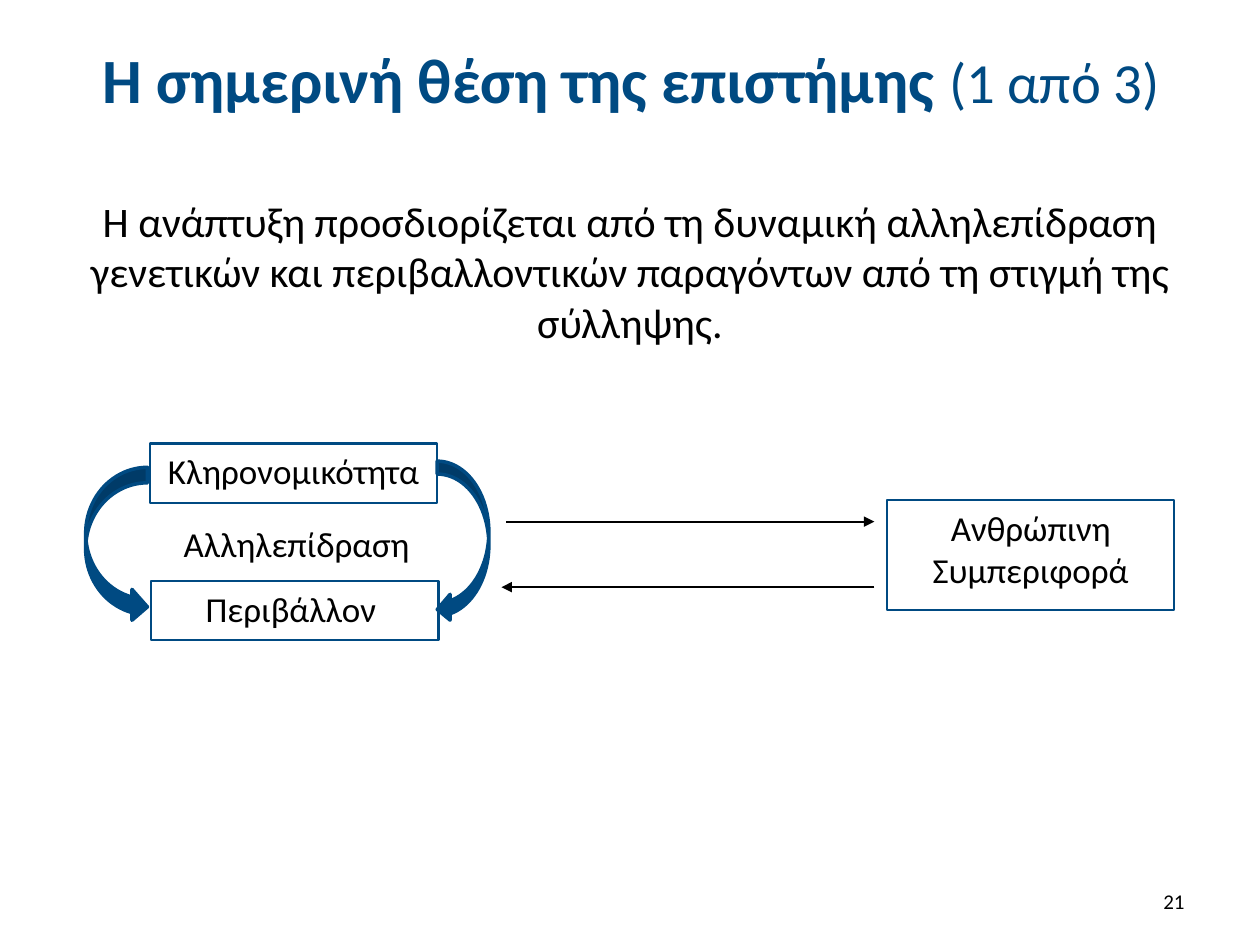
import pptx
import pptx.dml.color
import pptx.enum.shapes
import pptx.enum.text
import pptx.oxml.ns
import pptx.util
from lxml import etree

Inches = pptx.util.Inches
Pt = pptx.util.Pt
SHAPE = pptx.enum.shapes.MSO_SHAPE
ALIGN = pptx.enum.text.PP_ALIGN
ANCHOR = pptx.enum.text.MSO_ANCHOR
qn = pptx.oxml.ns.qn

COLORS = {"blue": "004A82", "black": "000000"}
FONT = "Calibri"
BOX_W = 2.28
BOX_H = 0.47


def rgb(name):
    return pptx.dml.color.RGBColor.from_string(COLORS[name])


def place(s, left, top, width, height):
    s.left, s.top = Inches(left), Inches(top)
    s.width, s.height = Inches(width), Inches(height)


def write(s, runs, align=ALIGN.CENTER, anchor=ANCHOR.TOP, color="black"):
    """Fill a shape with one paragraph of (text, size, bold) runs."""
    tf = s.text_frame
    tf.word_wrap = True
    tf.vertical_anchor = anchor
    p = tf.paragraphs[0]
    p.alignment = align
    p.space_before = Pt(0)
    for text, size, bold in runs:
        r = p.add_run()
        r.text = text
        r.font.name = FONT
        r.font.size = Pt(size)
        r.font.bold = bold
        r.font.color.rgb = rgb(color)
    return p


def add_label(shapes, text, size, left, top, width, height, **layout):
    s = shapes.add_textbox(*map(Inches, (left, top, width, height)))
    write(s, [(text, size, False)], **layout)
    return s


def add_outlined(shapes, kind, left, top, width, height, weight):
    s = shapes.add_shape(kind, *map(Inches, (left, top, width, height)))
    s.shadow.inherit = False
    s.line.color.rgb = rgb("blue")
    s.line.width = Pt(weight)
    return s


def add_box(shapes, text, left, top, height=BOX_H):
    s = add_outlined(shapes, SHAPE.RECTANGLE, left, top, BOX_W, height, 1.25)
    s.fill.background()
    write(s, [(text, 20, False)])


def add_curved_arrow(shapes, kind, left, top, width, height):
    s = add_outlined(shapes, kind, left, top, width, height, 2)
    s.fill.solid()
    s.fill.fore_color.rgb = rgb("blue")


def add_arrow(shapes, x1, x2, y):
    s = shapes.add_connector(pptx.enum.shapes.MSO_CONNECTOR.STRAIGHT,
                             Inches(x1), Inches(y), Inches(x2), Inches(y))
    s.line.color.rgb = rgb("black")
    s.line.width = Pt(1.25)
    etree.SubElement(s.line._get_or_add_ln(), qn("a:tailEnd"), type="triangle")
    etree.SubElement(s._element.spPr, qn("a:effectLst"))


def main():
    prs = pptx.Presentation()
    prs.slide_width, prs.slide_height = Inches(10), Inches(7.5)
    slide = prs.slides.add_slide(prs.slide_layouts[1])

    # Title
    title = slide.shapes.title
    place(title, 0.51, 0.13, 9, 0.99)
    write(title, [("Η σημερινή θέση της επιστήμης ", 36, True),
                  ("(1 από 3)", 32.4, False)],
          anchor=ANCHOR.MIDDLE, color="blue")

    # Body statement, without bullet
    body = slide.placeholders[1]
    place(body, 0.5, 1.5, 9, 1.5)
    p = write(body, [("Η ανάπτυξη προσδιορίζεται από τη δυναμική αλληλεπίδραση "
                      "γενετικών και περιβαλλοντικών παραγόντων από τη στιγμή "
                      "της σύλληψης.", 24, False)])
    pPr = p._p.get_or_add_pPr()
    pPr.set("marL", "0")
    pPr.set("indent", "0")
    etree.SubElement(pPr, qn("a:buNone"))

    # Slide number
    add_label(slide.shapes, "21", 12, 7.17, 6.95, 2.33, 0.4,
              align=ALIGN.RIGHT, anchor=ANCHOR.MIDDLE)

    # Diagram: heredity and environment interact
    shapes = slide.shapes.add_group_shape().shapes
    add_box(shapes, "Κληρονομικότητα", 1.19, 3.52)
    add_curved_arrow(shapes, SHAPE.CURVED_RIGHT_ARROW, 0.68, 3.71, 0.49, 1.23)
    add_curved_arrow(shapes, SHAPE.CURVED_LEFT_ARROW, 3.47, 3.66, 0.41, 1.28)
    add_box(shapes, "Περιβάλλον ", 1.2, 4.61)
    label = add_label(shapes, "Αλληλεπίδραση", 20, 1.36, 4.1, 2.13, 0.44,
                      align=ALIGN.LEFT)
    label.text_frame.auto_size = pptx.enum.text.MSO_AUTO_SIZE.SHAPE_TO_FIT_TEXT

    # Diagram: both ways to human behaviour
    add_arrow(shapes, 4.02, 6.94, 4.14)
    add_arrow(shapes, 6.94, 3.98, 4.66)
    add_box(shapes, "Ανθρώπινη Συμπεριφορά", 7.04, 3.97, height=0.87)

    prs.save("out.pptx")


if __name__ == "__main__":
    main()
